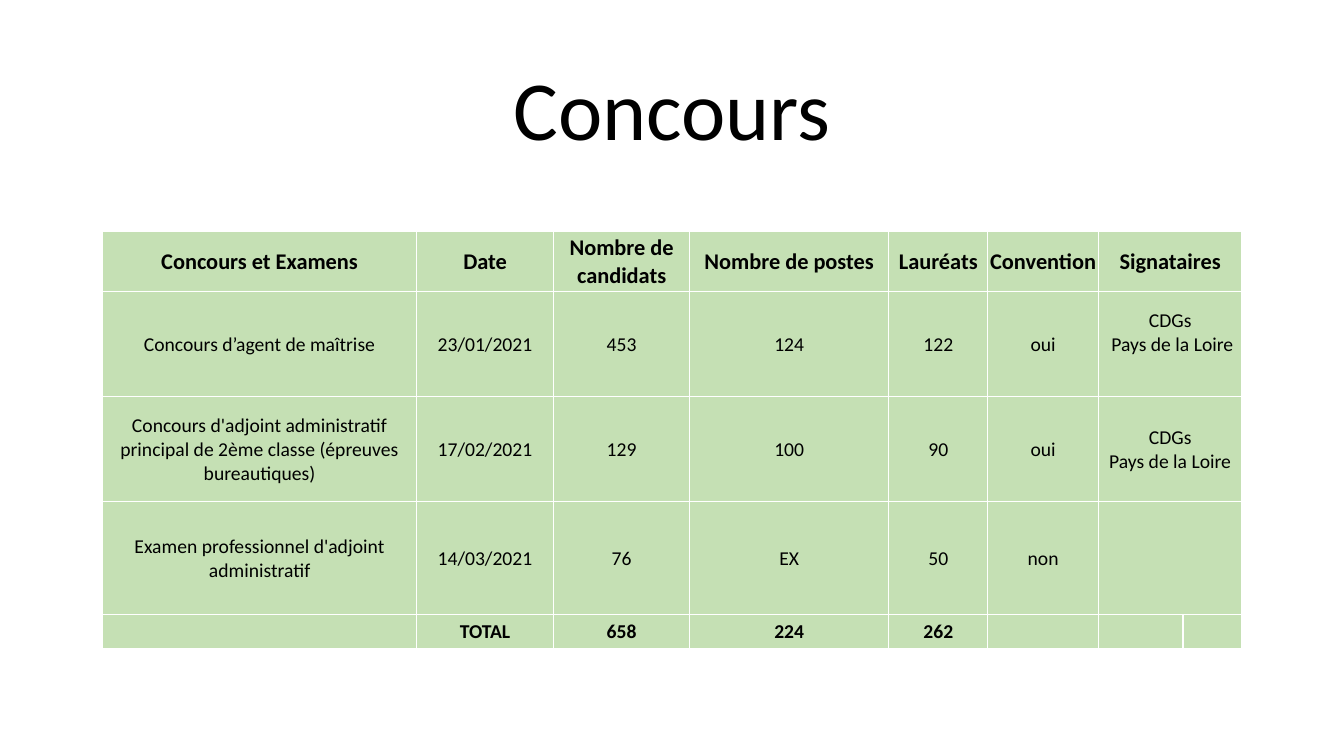
from lxml import etree
from pptx import Presentation
from pptx.dml.color import RGBColor
from pptx.enum.text import MSO_ANCHOR, PP_ALIGN
from pptx.oxml.ns import qn
from pptx.util import Pt

CENTER = PP_ALIGN.CENTER
MIDDLE = MSO_ANCHOR.MIDDLE
BLACK = RGBColor(0x00, 0x00, 0x00)
WHITE = RGBColor(0xFF, 0xFF, 0xFF)
GREEN = RGBColor(0xC5, 0xE0, 0xB4)

TITLE = {"size": Pt(60), "bold": False}
HEAD = {"size": Pt(16), "bold": True}
BODY = {"size": Pt(14), "bold": False}
TOTAL = {"size": Pt(14), "bold": True}
INSET = {"margin_left": Pt(0.75), "margin_right": Pt(0.75),
         "margin_top": Pt(0.75), "margin_bottom": Pt(0)}

COLS = [223.9, 98.2, 97, 142.4, 70.6, 79.2, 60.3, 42]
ROWS = [  # height, format, texts
    (42.8, HEAD, ["Concours et Examens", "Date", "Nombre de candidats",
                  "Nombre de postes", "Lauréats", "Convention", "Signataires"]),
    (75.2, BODY, ["Concours d’agent de maîtrise", "23/01/2021", "453", "124",
                  "122", "oui", "CDGs\n Pays de la Loire"]),
    (75.2, BODY, ["Concours d'adjoint administratif principal de 2ème classe "
                  "(épreuves bureautiques)", "17/02/2021", "129", "100", "90",
                  "oui", "CDGs\nPays de la Loire"]),
    (80.6, BODY, ["Examen professionnel d'adjoint administratif", "14/03/2021",
                  "76", "EX", "50", "non", ""]),
    (24.4, TOTAL, ["", "TOTAL", "658", "224", "262", "", "", ""]),
]


def set_all(item, style):
    for name, value in style.items():
        setattr(item, name, value)


def write(frame, text, style):
    """Fill a text frame with centred paragraphs, one per line."""
    frame.text = text
    for para in frame.paragraphs:
        para.alignment = CENTER
        for run in para.runs:
            set_all(run.font, {"name": "Calibri", **style})
            run.font.color.rgb = BLACK


def add_title(slide, text):
    box = slide.shapes.add_textbox(Pt(66), Pt(28.75), Pt(828), Pt(104.4))
    frame = box.text_frame
    set_all(frame, {"word_wrap": True, "vertical_anchor": MIDDLE})
    write(frame, text, TITLE)
    frame.paragraphs[0].line_spacing = 0.9


def add_edges(cell):
    """Draw thin white borders, placed ahead of the cell's fill."""
    props = cell._tc.get_or_add_tcPr()
    for spot, tag in enumerate(("a:lnL", "a:lnR", "a:lnT", "a:lnB")):
        line = etree.Element(qn(tag), w=str(Pt(1)))
        fill = etree.SubElement(line, qn("a:solidFill"))
        etree.SubElement(fill, qn("a:srgbClr"), val=str(WHITE))
        props.insert(spot, line)


def fill_cell(cell, text, style):
    set_all(cell, {**INSET, "vertical_anchor": MIDDLE})
    cell.fill.solid()
    cell.fill.fore_color.rgb = GREEN
    write(cell.text_frame, text, style)
    add_edges(cell)


def add_grid(slide):
    high = sum(row[0] for row in ROWS)
    frame = slide.shapes.add_table(len(ROWS), len(COLS), Pt(73.5), Pt(165.2),
                                   Pt(sum(COLS)), Pt(high))
    table = frame.table
    for col, width in zip(table.columns, COLS):
        col.width = Pt(width)
    for r, (height, style, texts) in enumerate(ROWS):
        table.rows[r].height = Pt(height)
        for c in range(len(COLS)):
            fill_cell(table.cell(r, c), texts[c] if c < len(texts) else "", style)
        # A short row spreads its last text over two columns
        if len(texts) < len(COLS):
            table.cell(r, 6).merge(table.cell(r, 7))
    # The first signatories sit above the middle
    table.cell(1, 6).margin_bottom = Pt(17)


def main():
    deck = Presentation()
    set_all(deck, {"slide_width": Pt(960), "slide_height": Pt(540)})
    slide = deck.slides.add_slide(deck.slide_layouts[6])
    add_title(slide, "Concours")
    add_grid(slide)
    deck.save("out.pptx")


if __name__ == "__main__":
    main()
